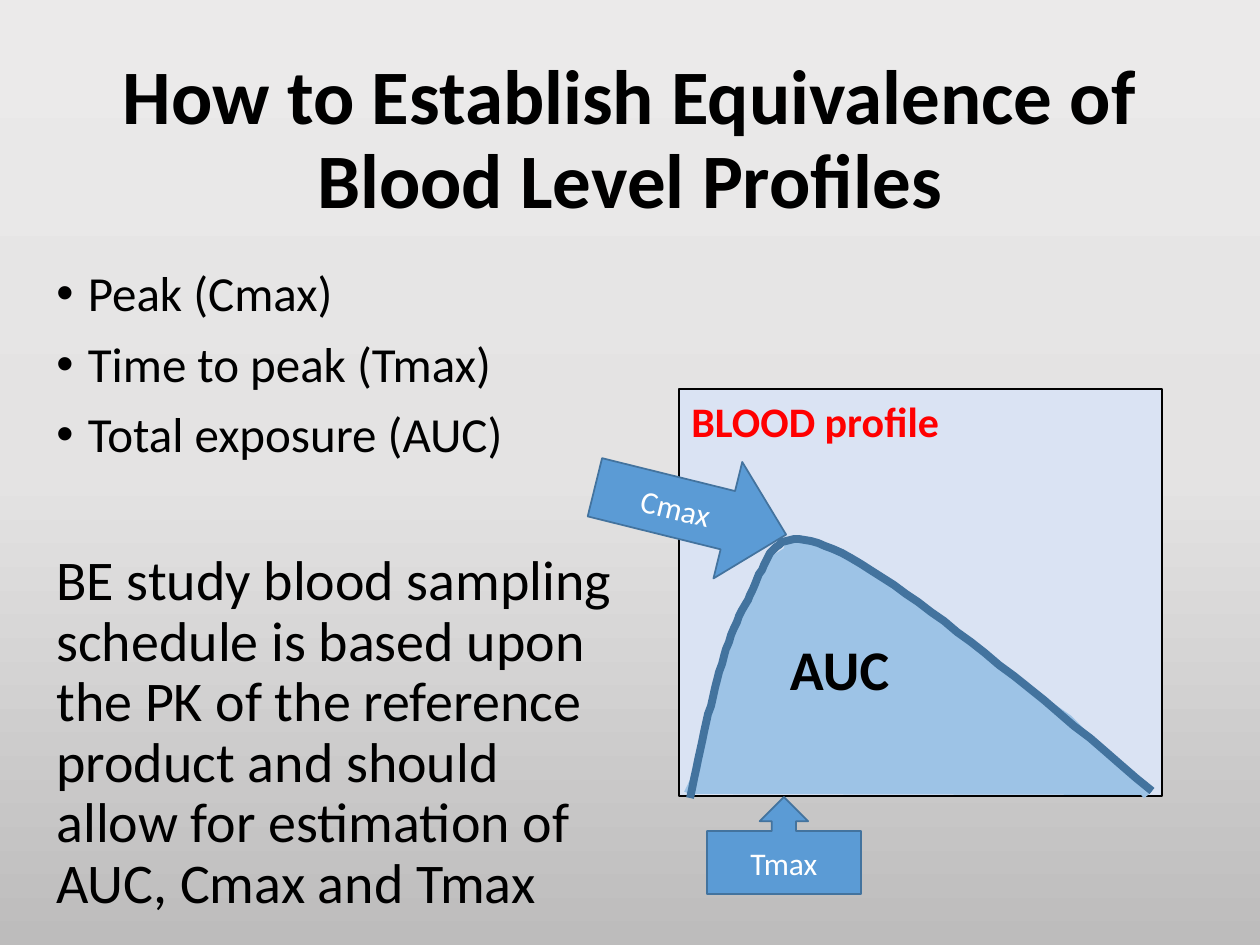
"""Build the slide on equivalence of blood level profiles."""
from copy import deepcopy

from lxml.etree import SubElement
from pptx import Presentation
from pptx.dml.color import RGBColor
from pptx.enum.shapes import MSO_SHAPE
from pptx.enum.text import MSO_ANCHOR, PP_ALIGN
from pptx.oxml.ns import qn
from pptx.util import Pt

PX = 914400 / 126
BLUE, EDGE, AREA = "5B9BD5", "43739E", "9DC3E6"
STOPS = [(0, "EBEAEA"), (0.5, "E4E3E3"), (1, "BDBCBC")]
TITLE = "How to Establish Equivalence of Blood Level Profiles"
POINTS = ["Peak (Cmax)", "Time to peak (Tmax)", "Total exposure (AUC)"]
NOTE = ("BE study blood sampling schedule is based upon the PK of the reference "
        "product and should allow for estimation of AUC, Cmax and Tmax")
MARKS = [
    ("Cmax", MSO_SHAPE.RIGHT_ARROW, (592, 451, 197, 120), 13.9),
    ("Tmax", MSO_SHAPE.UP_ARROW_CALLOUT, (707, 797, 154, 97), 0),
]
REGION = [
    (689, 794), (700, 771), (704, 742), (713, 714), (720, 687), (727, 674),
    (735, 652), (738, 622), (746, 610), (756, 592), (766, 564), (774, 561),
    (788, 552), (790, 546), (809, 542), (825, 553), (854, 567), (872, 578),
    (903, 598), (930, 616), (955, 634), (979, 655), (1004, 676), (1028, 692),
    (1068, 720), (1100, 752), (1124, 777), (1142, 788), (1148, 795),
]
CURVE = [
    [(690, 798), (706, 722), (722, 646), (745, 605)],
    [(745, 605), (769, 563), (766, 519), (833, 549)],
    [(833, 549), (901, 581), (1027, 685), (1152, 791)],
]


def emu(n):
    return round(n * PX)


def rgb(code):
    return RGBColor.from_string(code)


def write(frame, text, size=18, color="000000", bold=False, align=PP_ALIGN.LEFT,
          line=1.0, before=0, bullet=False, anchor=MSO_ANCHOR.TOP):
    frame.word_wrap = True
    frame.vertical_anchor = anchor
    para = frame.paragraphs[0]
    if para.runs:
        para = frame.add_paragraph()
    para.alignment, para.line_spacing, para.space_before = align, line, Pt(before)
    if bullet:
        props = para._p.get_or_add_pPr()
        props.set("marL", "228600")
        props.set("indent", "-228600")
        SubElement(props, qn("a:buFont")).set("typeface", "Arial")
        SubElement(props, qn("a:buChar")).set("char", "•")
    run = para.add_run()
    run.text = text
    font = run.font
    font.name, font.size, font.bold = "Calibri", Pt(size), bold
    font.color.rgb = rgb(color)


def paint(shape, fill, line, width):
    shape.shadow.inherit = False
    if fill:
        shape.fill.solid()
        shape.fill.fore_color.rgb = rgb(fill)
    else:
        shape.fill.background()
    shape.line.color.rgb = rgb(line)
    shape.line.width = Pt(width)
    return shape


def trace(shapes, dots):
    pen = shapes.build_freeform(*dots[0], scale=PX)
    pen.add_line_segments(dots[1:], close=False)
    return pen.convert_to_shape()


def sample(a, b, c, d, steps=24):
    for i in range(steps + 1):
        t = i / steps
        u = 1 - t
        yield tuple(u**3 * p + 3 * u * u * t * q + 3 * u * t * t * r + t**3 * s
                    for p, q, r, s in zip(a, b, c, d))


def shade(slide):
    fill = slide.background.fill
    fill.gradient()
    fill.gradient_angle = 270
    group = slide.element.find(".//" + qn("a:gsLst"))
    group.append(deepcopy(group[0]))
    for stop, (place, color) in zip(fill.gradient_stops, STOPS):
        stop.position = place
        stop.color.rgb = rgb(color)


def main():
    deck = Presentation()
    deck.slide_width, deck.slide_height = emu(1260), emu(945)
    slide = deck.slides.add_slide(deck.slide_layouts[6])
    shapes = slide.shapes
    shade(slide)

    title = shapes.add_textbox(*map(emu, (87, 50, 1086, 183))).text_frame
    write(title, TITLE, size=44, bold=True, align=PP_ALIGN.CENTER, line=0.9,
          anchor=MSO_ANCHOR.MIDDLE)

    body = shapes.add_textbox(*map(emu, (44, 263, 597, 660))).text_frame
    for text in POINTS:
        write(body, text, size=28, line=0.9, before=10, bullet=True)
    write(body, NOTE, size=32, line=0.9, before=51)

    panel = shapes.add_shape(MSO_SHAPE.RECTANGLE, *map(emu, (679, 389, 483, 407)))
    paint(panel, "DAE3F3", "000000", 0.75)
    write(panel.text_frame, "BLOOD profile", size=24, color="FF0000", bold=True)

    def mark(text, kind, box, turn):
        shape = paint(shapes.add_shape(kind, *map(emu, box)), BLUE, EDGE, 1)
        shape.rotation = turn
        write(shape.text_frame, text, color="FFFFFF", align=PP_ALIGN.CENTER,
              anchor=MSO_ANCHOR.MIDDLE)

    mark(*MARKS[0])
    region = paint(trace(shapes, REGION), AREA, AREA, 6)
    region.text_frame.margin_left = emu(101)
    write(region.text_frame, "AUC", size=32, bold=True, anchor=MSO_ANCHOR.MIDDLE)
    dots = [dot for part in CURVE for dot in sample(*part)]
    paint(trace(shapes, dots), None, EDGE, 4.5)
    mark(*MARKS[1])

    deck.save("out.pptx")


if __name__ == "__main__":
    main()
